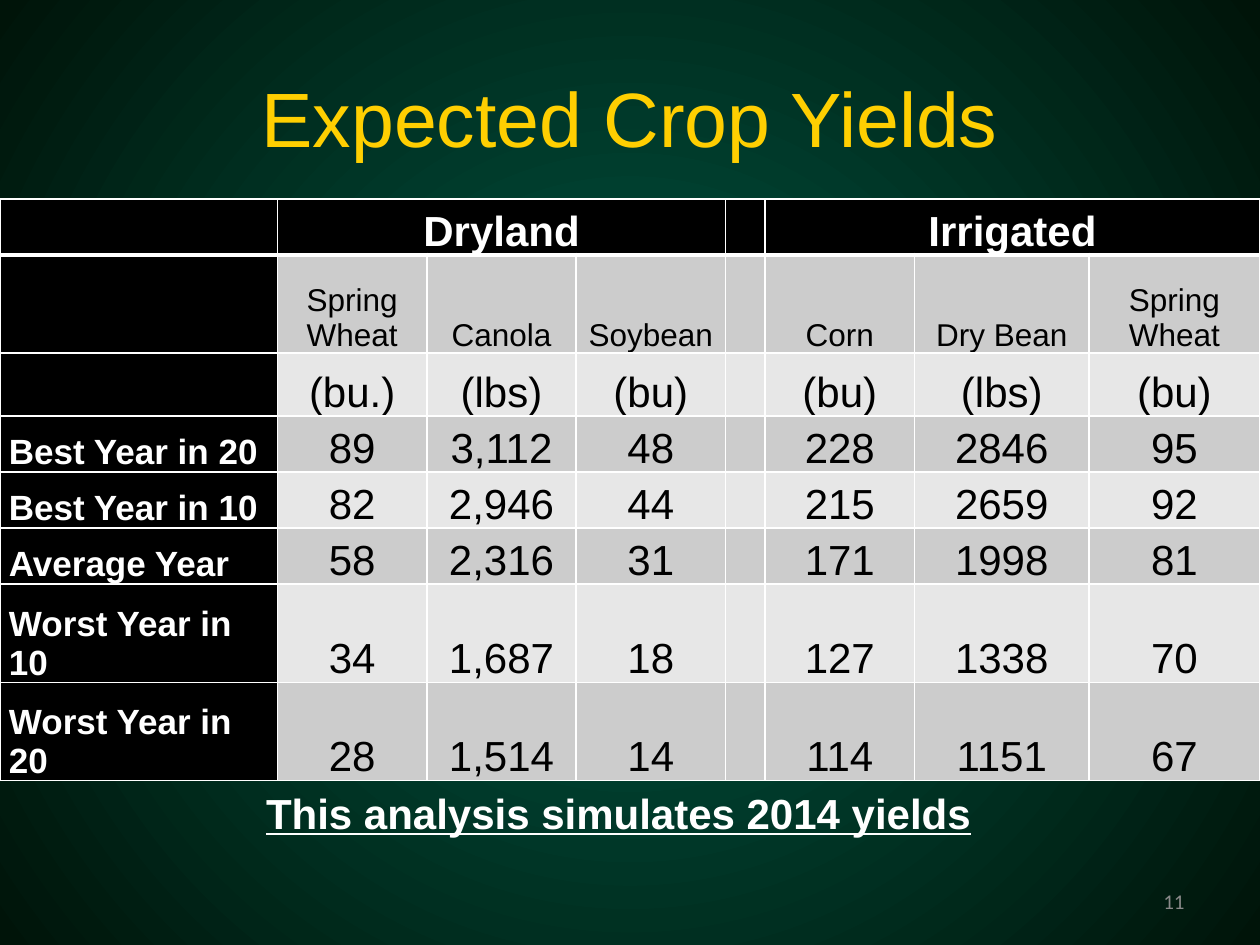
from lxml.etree import SubElement
from pptx import Presentation
from pptx.dml.color import RGBColor
from pptx.enum.text import MSO_ANCHOR, MSO_AUTO_SIZE, PP_ALIGN
from pptx.oxml.ns import qn
from pptx.util import Cm, Pt

TITLE = "Expected Crop Yields"
CAPTION = "This analysis simulates 2014 yields"
PAGE = "11"
ROWS = [
    ["", "Dryland", "", "", "", "Irrigated", "", ""],
    ["", "Spring Wheat", "Canola", "Soybean", "", "Corn", "Dry Bean", "Spring Wheat"],
    ["", "(bu.)", "(lbs)", "(bu)", "", "(bu)", "(lbs)", "(bu)"],
    ["Best Year in 20", "89", "3,112", "48", "", "228", "2846", "95"],
    ["Best Year in 10", "82", "2,946", "44", "", "215", "2659", "92"],
    ["Average Year", "58", "2,316", "31", "", "171", "1998", "81"],
    ["Worst Year in 10", "34", "1,687", "18", "", "127", "1338", "70"],
    ["Worst Year in 20", "28", "1,514", "14", "", "114", "1151", "67"],
]
GROUP_STARTS = (1, 5)
GROUP_SIZE = 3
COL_WIDTHS = [5.59, 3.02, 3, 3.02, 0.79, 3.02, 3.51, 3.45]
ROW_HEIGHTS = [1.13, 1.98, 1.27, 1.13, 1.13, 1.13, 1.98, 1.98]

THEME = {
    "font": "Arial", "page_font": "Calibri",
    "title": "FFCF01", "light": "FFFFFF", "dark": "000000", "page": "898989",
    "bands": ("CCCCCC", "E7E7E7"),
    "glow": ((0.02, "005643"), (1, "001409")),
    "title_size": 44, "body_size": 24, "label_size": 20, "crop_size": 18, "page_size": 12,
    "rule": 1, "header_rule": 3,
}


def rgb(value):
    return RGBColor.from_string(value)


def write(tf, text, size, color, align=PP_ALIGN.CENTER, bold=False,
          underline=False, font=THEME["font"]):
    p = tf.paragraphs[0]
    p.alignment = align
    r = p.add_run()
    r.text = text
    r.font.name = font
    r.font.size = Pt(size)
    r.font.bold = bold
    r.font.underline = underline
    r.font.color.rgb = rgb(color)


def add_text(s, box, text, size, color, anchor=MSO_ANCHOR.TOP, **style):
    tf = s.shapes.add_textbox(*map(Cm, box)).text_frame
    tf.word_wrap = True
    tf.vertical_anchor = anchor
    write(tf, text, size, color, **style)
    return tf


def paint_background(s):
    fill = s.background.fill
    fill.gradient()
    for stop, (position, color) in zip(fill.gradient_stops, THEME["glow"]):
        stop.position = position
        stop.color.rgb = rgb(color)
    grad = s.element.find(".//" + qn("a:gradFill"))
    grad.remove(grad.find(qn("a:lin")))
    path = SubElement(grad, qn("a:path"), {"path": "circle"})
    SubElement(path, qn("a:fillToRect"), dict.fromkeys("ltrb", "50000"))


def set_borders(cell, row):
    thick_side = {0: "B", 1: "T"}.get(row)
    tc_pr = cell._tc.get_or_add_tcPr()
    for side in "LRTB":
        width = THEME["header_rule"] if side == thick_side else THEME["rule"]
        ln = SubElement(tc_pr, qn("a:ln" + side), {"w": str(Pt(width))})
        fill = SubElement(ln, qn("a:solidFill"))
        SubElement(fill, qn("a:srgbClr"), {"val": THEME["light"]})


def style_cell(cell, row, col, text):
    heading = row == 0 or col == 0
    set_borders(cell, row)
    cell.fill.solid()
    cell.fill.fore_color.rgb = rgb(THEME["dark"] if heading else THEME["bands"][(row - 1) % 2])
    cell.vertical_anchor = MSO_ANCHOR.BOTTOM
    cell.margin_left = cell.margin_right = Cm(0.18)
    cell.margin_top = cell.margin_bottom = 0
    if text:
        size = "label_size" if col == 0 else "crop_size" if row == 1 else "body_size"
        write(cell.text_frame, text, THEME[size], THEME["light" if heading else "dark"],
              align=PP_ALIGN.LEFT if col == 0 else PP_ALIGN.CENTER, bold=heading)


def add_yields(s):
    table = s.shapes.add_table(len(ROWS), len(COL_WIDTHS), 0, Cm(4.01),
                               Cm(sum(COL_WIDTHS)), Cm(sum(ROW_HEIGHTS))).table
    for column, width in zip(table.columns, COL_WIDTHS):
        column.width = Cm(width)
    for row, height in zip(table.rows, ROW_HEIGHTS):
        row.height = Cm(height)
    for i, row in enumerate(ROWS):
        for j, text in enumerate(row):
            style_cell(table.cell(i, j), i, j, text)
    for start in GROUP_STARTS:
        table.cell(0, start).merge(table.cell(0, start + GROUP_SIZE - 1))


def main():
    prs = Presentation()
    prs.slide_width, prs.slide_height = Cm(25.4), Cm(19.05)
    s = prs.slides.add_slide(prs.slide_layouts[5])
    paint_background(s)

    title = s.shapes.title
    title.left, title.top, title.width, title.height = map(Cm, (1.27, 0.76, 22.86, 3.18))
    title.text_frame.vertical_anchor = MSO_ANCHOR.MIDDLE
    write(title.text_frame, TITLE, THEME["title_size"], THEME["title"])

    add_yields(s)
    add_text(s, (18.21, 17.65, 5.92, 1.02), PAGE, THEME["page_size"], THEME["page"],
             anchor=MSO_ANCHOR.MIDDLE, align=PP_ALIGN.RIGHT, font=THEME["page_font"])
    caption = add_text(s, (1.27, 15.75, 22.4, 1.27), CAPTION, THEME["body_size"],
                       THEME["light"], bold=True, underline=True)
    caption.auto_size = MSO_AUTO_SIZE.SHAPE_TO_FIT_TEXT
    prs.save("out.pptx")


if __name__ == "__main__":
    main()
